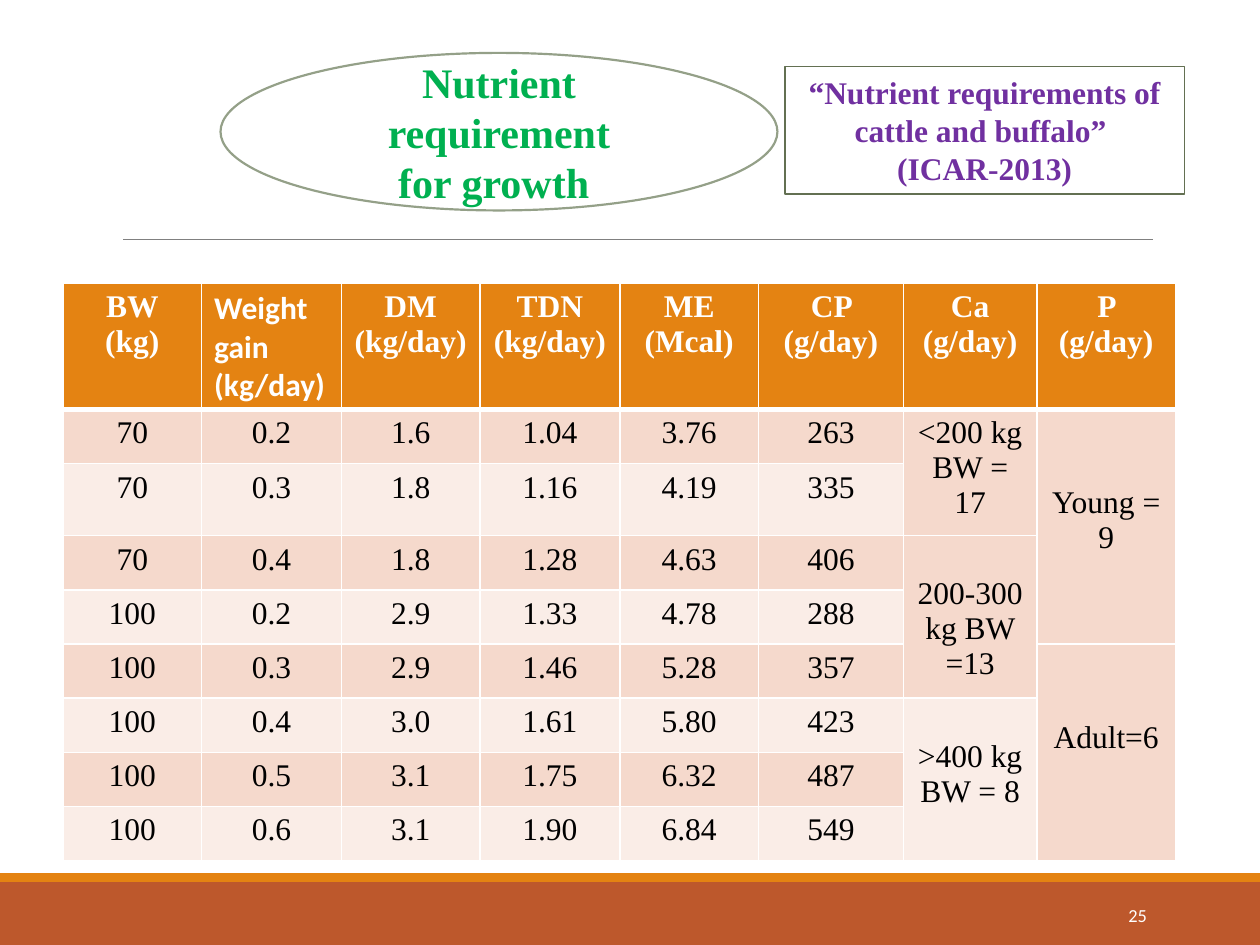
from dataclasses import dataclass

from lxml.etree import SubElement
from pptx import Presentation
from pptx.dml.color import RGBColor
from pptx.enum.shapes import MSO_CONNECTOR, MSO_SHAPE
from pptx.enum.text import MSO_ANCHOR, MSO_AUTO_SIZE, PP_ALIGN
from pptx.oxml.ns import qn
from pptx.util import Inches, Pt

COLORS = {
    "white": "FFFFFF", "black": "000000", "orange": "E48312", "rust": "BD582C",
    "rule": "808080", "sage": "94A088", "moss": "637052", "green": "00B050",
    "purple": "7030A0", "band": "F5D9CC", "pale": "FAEDE7",
}
SERIF, SANS = "Times New Roman", "Calibri"
LINE_HEIGHT = 0.277
COLUMN_WIDTHS = [1.1, 1.11, 1.1, 1.11, 1.1, 1.15, 1.06, 1.1]
HEADER_HEIGHT, ROW_HEIGHT = 0.75, 0.43
HEADERS = ["BW\n(kg)", "Weight gain (kg/day)", "DM\n(kg/day)", "TDN (kg/day)",
           "ME (Mcal)", "CP (g/day)", "Ca (g/day)", "P (g/day)"]
GAIN_COLUMN, CALCIUM, PHOSPHORUS = 1, 6, 7
REQUIREMENTS = [
    ["70", "0.2", "1.6", "1.04", "3.76", "263"],
    ["70", "0.3", "1.8", "1.16", "4.19", "335"],
    ["70", "0.4", "1.8", "1.28", "4.63", "406"],
    ["100", "0.2", "2.9", "1.33", "4.78", "288"],
    ["100", "0.3", "2.9", "1.46", "5.28", "357"],
    ["100", "0.4", "3.0", "1.61", "5.80", "423"],
    ["100", "0.5", "3.1", "1.75", "6.32", "487"],
    ["100", "0.6", "3.1", "1.90", "6.84", "549"],
]


@dataclass
class Bar:
    top: float
    height: float
    color: str


@dataclass
class Span:
    column: int
    first: int
    last: int
    text: str
    lines_above: int


BARS = [Bar(7, 0.5, "rust"), Bar(6.93, 0.07, "orange")]
SPANS = [
    Span(CALCIUM, 1, 2, "<200 kg BW = 17", 0),
    Span(CALCIUM, 3, 5, "200-300 kg BW =13", 1),
    Span(CALCIUM, 6, 8, ">400 kg BW = 8", 1),
    Span(PHOSPHORUS, 1, 4, "Young = 9", 2),
    Span(PHOSPHORUS, 5, 8, "Adult=6", 2),
]


def rgb(name: str) -> RGBColor:
    return RGBColor.from_string(COLORS[name])


def write(frame, text: str, size: float = 18, font: str = SERIF, color: str = "black",
          bold: bool = False, align=PP_ALIGN.CENTER) -> None:
    frame.word_wrap = True
    for index, line in enumerate(text.split("\n")):
        para = frame.paragraphs[0] if index == 0 else frame.add_paragraph()
        para.alignment, para.line_spacing = align, 1.0
        span = para.add_run()
        span.text = line
        span.font.size, span.font.name, span.font.bold = Pt(size), font, bold
        span.font.color.rgb = rgb(color)


def place(box, left: float, top: float, width: float, height: float) -> None:
    box.left, box.top = Inches(left), Inches(top)
    box.width, box.height = Inches(width), Inches(height)


def outline(shape, color: str, width: float) -> None:
    shape.line.color.rgb = rgb(color)
    shape.line.width = Pt(width)


def add_filled(page, kind, fill: str):
    shape = page.shapes.add_shape(kind, 0, 0, 0, 0)
    shape.shadow.inherit = False
    shape.fill.solid()
    shape.fill.fore_color.rgb = rgb(fill)
    shape.line.fill.background()
    return shape


def add_rule(page) -> None:
    rule = page.shapes.add_connector(MSO_CONNECTOR.STRAIGHT, Inches(0.98), Inches(1.9),
                                     Inches(9.15), Inches(1.9))
    outline(rule, "rule", 0.5)
    SubElement(rule.line._get_or_add_ln().getparent(), qn("a:effectLst"))


def add_title(page) -> None:
    oval = add_filled(page, MSO_SHAPE.OVAL, "white")
    place(oval, 1.75, 0.42, 4.42, 1.25)
    outline(oval, "sage", 1.25)
    title = page.shapes.title
    oval.element.addnext(title.element)
    place(title, 2.4, 0.42, 3.12, 1.25)
    frame = title.text_frame
    frame.auto_size, frame.vertical_anchor = MSO_AUTO_SIZE.NONE, MSO_ANCHOR.MIDDLE
    frame.margin_top = frame.margin_bottom = 0
    write(frame, "Nutrient requirement\nfor growth ", size=24, color="green", bold=True)


def add_reference(page) -> None:
    box = page.shapes.add_textbox(0, 0, 0, 0)
    place(box, 6.23, 0.53, 3.17, 1.01)
    outline(box, "moss", 0.75)
    write(box.text_frame, "“Nutrient requirements of cattle and buffalo” \n(ICAR-2013)",
          color="purple", bold=True)


def add_page_number(page) -> None:
    box = page.shapes.add_textbox(0, 0, 0, 0)
    place(box, 8.12, 7.06, 1.08, 0.4)
    box.text_frame.vertical_anchor = MSO_ANCHOR.MIDDLE
    write(box.text_frame, "25", size=10.5, font=SANS, color="white", align=PP_ALIGN.RIGHT)


def style_cell(cell, fill: str, top: float, bottom: float) -> None:
    properties = cell._tc.get_or_add_tcPr()
    for side, width in {"lnL": 1, "lnR": 1, "lnT": top, "lnB": bottom}.items():
        line = SubElement(properties, qn(f"a:{side}"), w=str(Pt(width)))
        paint = SubElement(line, qn("a:solidFill"))
        SubElement(paint, qn("a:srgbClr"), val=COLORS["white"])
    cell.fill.solid()
    cell.fill.fore_color.rgb = rgb(fill)


def add_requirements(page) -> None:
    row_count = len(REQUIREMENTS) + 1
    height = HEADER_HEIGHT + ROW_HEIGHT * len(REQUIREMENTS)
    table = page.shapes.add_table(row_count, len(HEADERS), Inches(0.5), Inches(2.25),
                                  Inches(sum(COLUMN_WIDTHS)), Inches(height)).table
    for column, width in zip(table.columns, COLUMN_WIDTHS):
        column.width = Inches(width)
    for index, row in enumerate(table.rows):
        row.height = Inches(ROW_HEIGHT if index else HEADER_HEIGHT)
        fill = "orange" if index == 0 else "band" if index % 2 else "pale"
        for cell in row.cells:
            style_cell(cell, fill, 3 if index == 1 else 1, 1 if index else 3)
    for index, text in enumerate(HEADERS):
        gain = index == GAIN_COLUMN
        write(table.cell(0, index).text_frame, text, color="white", bold=True,
              font=SANS if gain else SERIF,
              align=PP_ALIGN.LEFT if gain else PP_ALIGN.CENTER)
    for row, values in enumerate(REQUIREMENTS, start=1):
        for column, value in enumerate(values):
            write(table.cell(row, column).text_frame, value)
    for span in SPANS:
        cell = table.cell(span.first, span.column)
        cell.merge(table.cell(span.last, span.column))
        cell.margin_top = Inches(0.05 + span.lines_above * LINE_HEIGHT)
        write(cell.text_frame, span.text)


def main() -> None:
    deck = Presentation()
    deck.slide_width, deck.slide_height = Inches(10), Inches(7.5)
    page = deck.slides.add_slide(deck.slide_layouts[5])
    for bar in BARS:
        place(add_filled(page, MSO_SHAPE.RECTANGLE, bar.color), 0, bar.top, 10, bar.height)
    add_rule(page)
    add_page_number(page)
    add_title(page)
    add_reference(page)
    add_requirements(page)
    deck.save("out.pptx")


if __name__ == "__main__":
    main()
